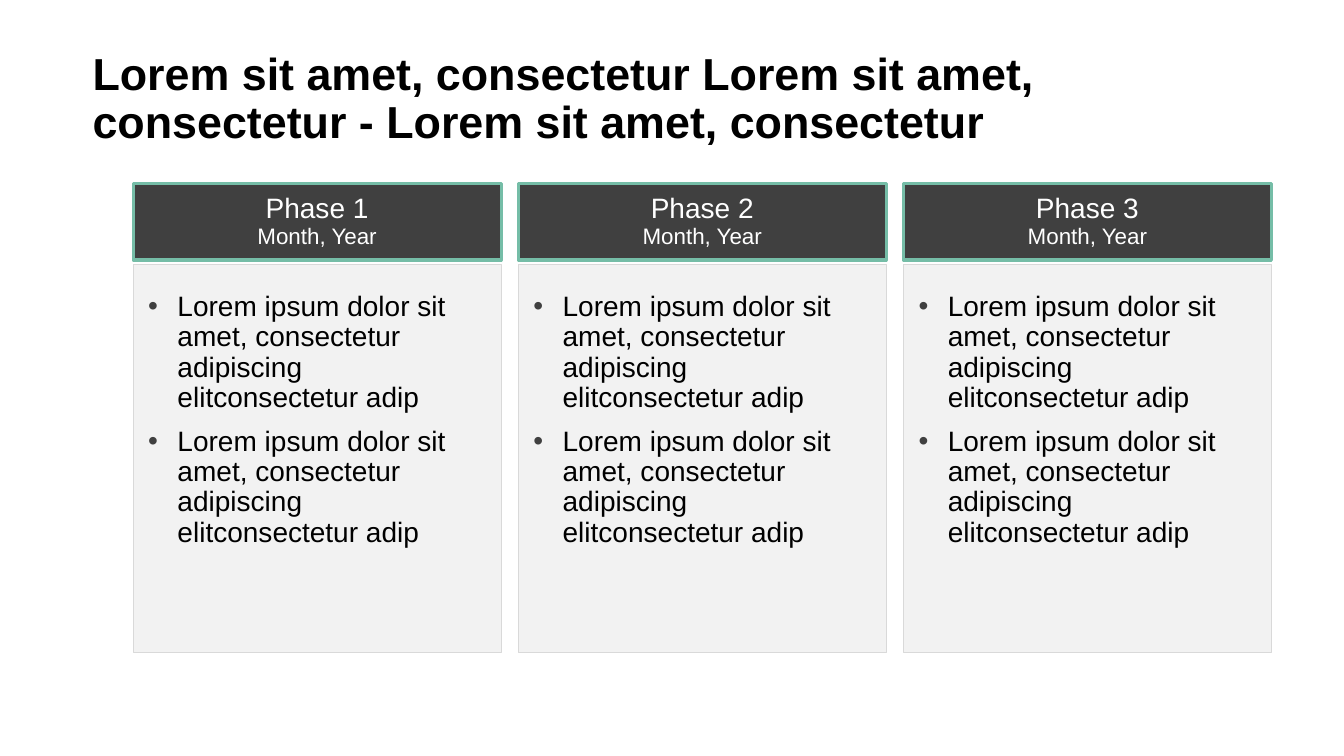
from dataclasses import dataclass

from lxml import etree
from pptx import Presentation
from pptx.dml.color import RGBColor
from pptx.enum import shapes, text
from pptx.oxml import ns
from pptx.util import Inches, Pt

BLACK = RGBColor(0x00, 0x00, 0x00)
WHITE = RGBColor(0xFF, 0xFF, 0xFF)
CHARCOAL = RGBColor(0x40, 0x40, 0x40)
PALE_GREY = RGBColor(0xF2, 0xF2, 0xF2)
EDGE_GREY = RGBColor(0xD9, 0xD9, 0xD9)
TEAL = RGBColor(0x75, 0xBD, 0xA7)

FONT = "Arial"
LEFT, PITCH, WIDTH = 1.32, 3.82, 3.65
INDENT = 0.29
POINT = "Lorem ipsum dolor sit amet, consectetur adipiscing elitconsectetur adip"


@dataclass
class Phase:
    name: str
    date: str
    points: list[str]


@dataclass
class Panel:
    top: float
    height: float
    fill: RGBColor
    edge: RGBColor
    edge_width: float
    margins: tuple[float, float, float, float]
    anchor: text.MSO_ANCHOR


HEADER = Panel(1.82, 0.76, CHARCOAL, TEAL, 2.25, (0.12, 0.04, 0.12, 0.04),
               text.MSO_ANCHOR.MIDDLE)
BODY = Panel(2.62, 3.85, PALE_GREY, EDGE_GREY, 0.75, (0.15, 0.28, 0.15, 0.05),
             text.MSO_ANCHOR.TOP)
PHASES = [Phase(f"Phase {number}", "Month, Year", [POINT, POINT])
          for number in (1, 2, 3)]


def add_bullet(paragraph) -> None:
    """Give the paragraph a hanging charcoal bullet."""
    props = paragraph._p.get_or_add_pPr()
    props.set("marL", str(Inches(INDENT)))
    props.set("indent", str(-Inches(INDENT)))
    colour = etree.SubElement(props, ns.qn("a:buClr"))
    etree.SubElement(colour, ns.qn("a:srgbClr")).set("val", str(CHARCOAL))
    etree.SubElement(props, ns.qn("a:buFont")).set("typeface", FONT)
    etree.SubElement(props, ns.qn("a:buChar")).set("char", "•")


def write(paragraph, *lines: tuple[str, int], color: RGBColor = BLACK,
          bold: bool = False, align=text.PP_ALIGN.LEFT, bullet: bool = False,
          space_before: float = 0) -> None:
    """Write (wording, size) lines into one paragraph, split by line breaks."""
    if bullet:
        add_bullet(paragraph)
    paragraph.alignment = align
    paragraph.line_spacing = 0.9
    paragraph.space_before = Pt(space_before)
    for index, (wording, size) in enumerate(lines):
        if index:
            paragraph.add_line_break()
        run = paragraph.add_run()
        run.text = wording
        run.font.name, run.font.size = FONT, Pt(size)
        run.font.bold = bold
        run.font.color.rgb = color


def add_panel(slide, panel: Panel, left: float):
    """Draw a filled rectangle and return its text frame."""
    box = slide.shapes.add_shape(
        shapes.MSO_SHAPE.RECTANGLE, Inches(left), Inches(panel.top),
        Inches(WIDTH), Inches(panel.height))
    box.shadow.inherit = False
    box.fill.solid()
    box.fill.fore_color.rgb = panel.fill
    box.line.color.rgb = panel.edge
    box.line.width = Pt(panel.edge_width)
    frame = box.text_frame
    frame.word_wrap = True
    frame.vertical_anchor = panel.anchor
    (frame.margin_left, frame.margin_top,
     frame.margin_right, frame.margin_bottom) = map(Inches, panel.margins)
    return frame


def add_phase(slide, phase: Phase, left: float) -> None:
    body = add_panel(slide, BODY, left)
    for index, point in enumerate(phase.points):
        paragraph = body.add_paragraph() if index else body.paragraphs[0]
        write(paragraph, (point, 20), bullet=True,
              space_before=10 if index else 0)
    header = add_panel(slide, HEADER, left)
    write(header.paragraphs[0], (phase.name, 20), (phase.date, 16),
          color=WHITE, align=text.PP_ALIGN.CENTER)


def main() -> None:
    deck = Presentation()
    deck.slide_width, deck.slide_height = Inches(13.33), Inches(7.5)
    slide = deck.slides.add_slide(deck.slide_layouts[6])

    # Title
    title = slide.shapes.add_textbox(
        Inches(0.82), Inches(0.46), Inches(11.96), Inches(1.46)).text_frame
    title.word_wrap = True
    write(title.paragraphs[0],
          ("Lorem sit amet, consectetur Lorem sit amet, consectetur"
           " - Lorem sit amet, consectetur", 32), bold=True)

    # Phase columns
    for column, phase in enumerate(PHASES):
        add_phase(slide, phase, LEFT + column * PITCH)

    deck.save("out.pptx")


if __name__ == "__main__":
    main()
